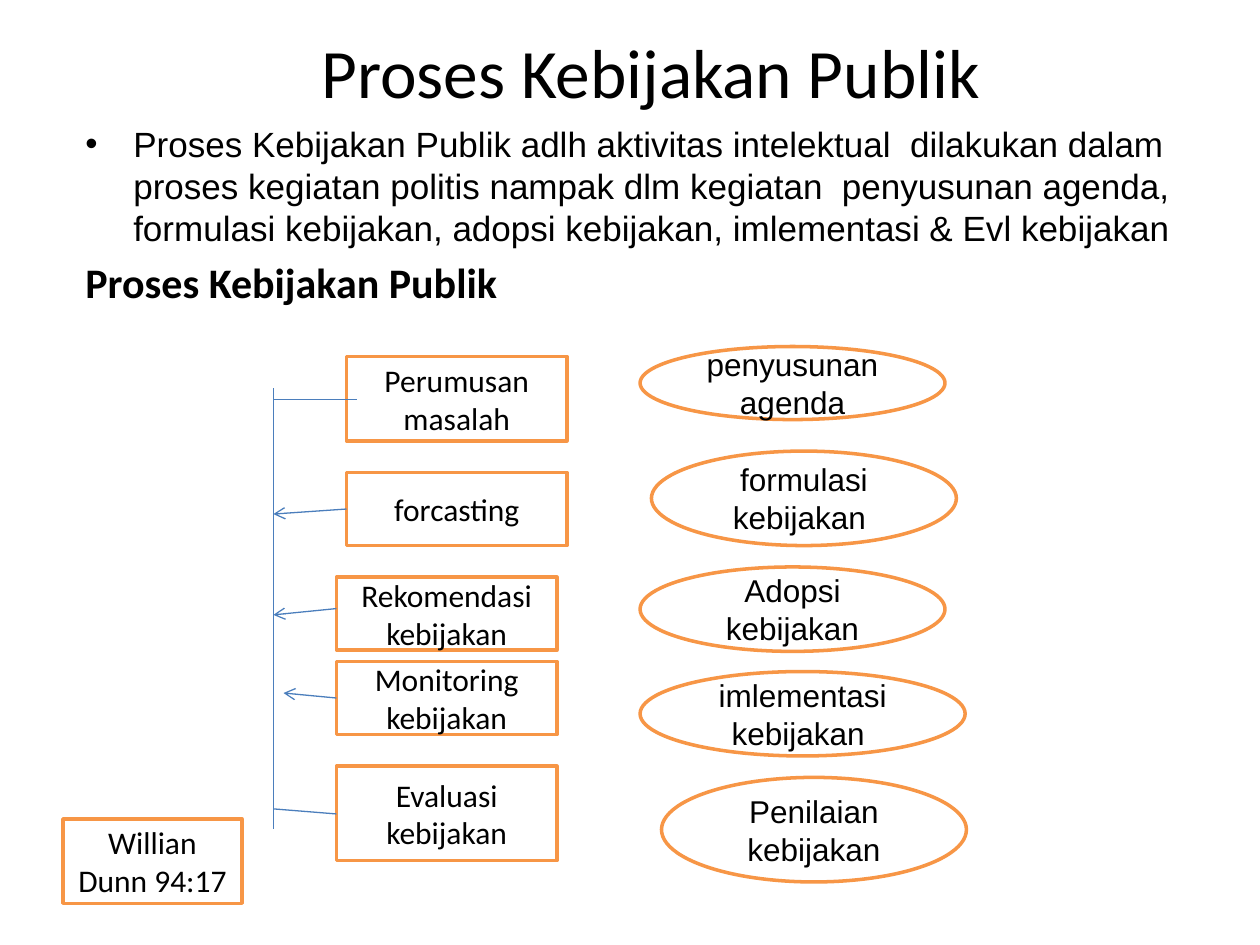
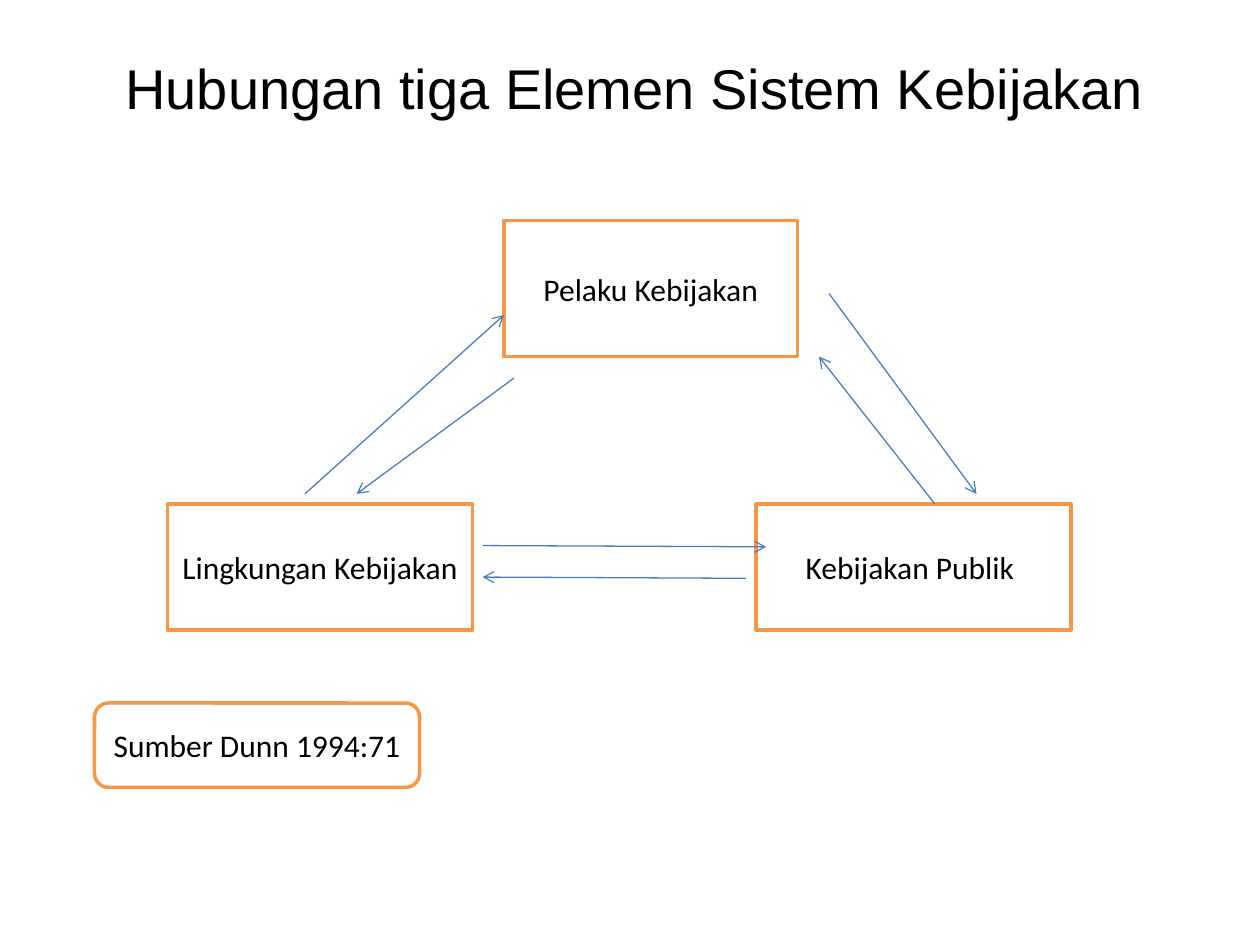
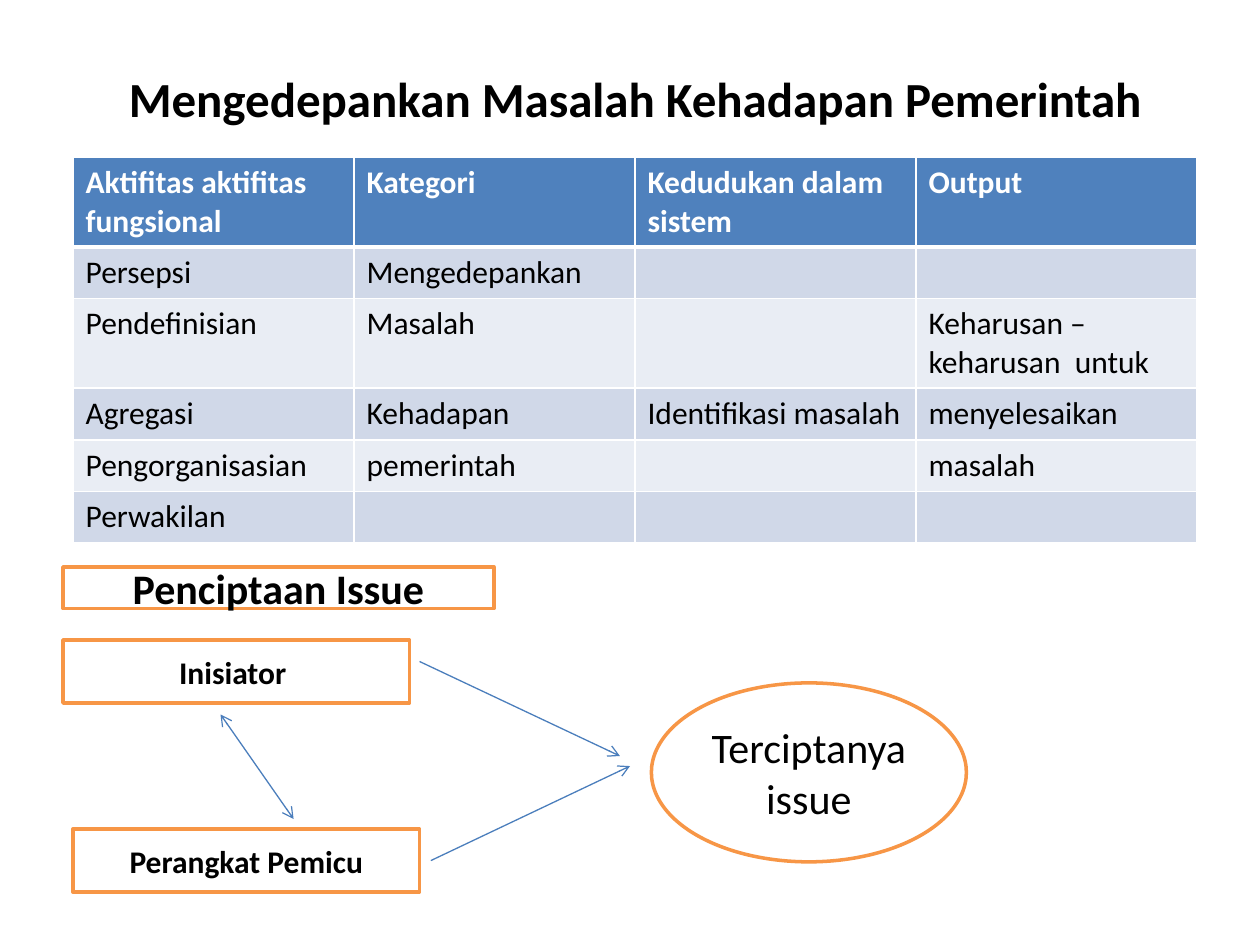
import pptx
import pptx.dml.color
import pptx.enum.shapes
import pptx.enum.text
import pptx.oxml
import pptx.oxml.ns
import pptx.util
from pptx.util import Inches

RGBColor = pptx.dml.color.RGBColor
BLACK = RGBColor(0x00, 0x00, 0x00)
WHITE = RGBColor(0xFF, 0xFF, 0xFF)
ORANGE = RGBColor(0xF7, 0x96, 0x46)
LINE_BLUE = RGBColor(0x4B, 0x7E, 0xBC)
HEADER_BLUE = RGBColor(0x4F, 0x81, 0xBD)
BAND_DARK = RGBColor(0xD0, 0xD8, 0xE8)
BAND_LIGHT = RGBColor(0xE9, 0xED, 0xF4)

SHAPE = pptx.enum.shapes.MSO_SHAPE
RECT, OVAL, ROUNDED = SHAPE.RECTANGLE, SHAPE.OVAL, SHAPE.ROUNDED_RECTANGLE
ANCHOR = pptx.enum.text.MSO_ANCHOR
CENTER = pptx.enum.text.PP_ALIGN.CENTER
TITLE_ONLY = 5


def add_xml(parent, tag, **attrs):
    el = pptx.oxml.parse_xml(f'<a:{tag} {pptx.oxml.ns.nsdecls("a")}/>')
    for name, value in attrs.items():
        el.set(name, str(value))
    parent.append(el)
    return el


class Deck:
    def __init__(self):
        self.prs = pptx.Presentation()
        self.prs.slide_width, self.prs.slide_height = Inches(10), Inches(7.5)
        self.s = None

    def font(self, p, size=18, name="Calibri", color=BLACK, bold=False):
        f = p.font
        f.size, f.name, f.bold = pptx.util.Pt(size), name, bold
        f.color.rgb = color

    def slide(self, title, x, y, w, h, **font):
        self.s = self.prs.slides.add_slide(self.prs.slide_layouts[TITLE_ONLY])
        sp = self.s.shapes.title
        sp.left, sp.top, sp.width, sp.height = map(Inches, (x, y, w, h))
        tf = sp.text_frame
        tf.auto_size = pptx.enum.text.MSO_AUTO_SIZE.NONE
        tf.vertical_anchor = ANCHOR.MIDDLE
        p = tf.paragraphs[0]
        p.text, p.alignment = title, CENTER
        self.font(p, **font)

    def body(self, x, y, w, h, items):
        """Each item is (text, bulleted, font settings)."""
        tf = self.s.shapes.add_textbox(*map(Inches, (x, y, w, h))).text_frame
        tf.word_wrap = True
        for i, (text, bulleted, font) in enumerate(items):
            p = tf.add_paragraph() if i else tf.paragraphs[0]
            p.text = text
            if i:
                p.space_before = pptx.util.Pt(font["size"] * 0.2)
            pPr = p._p.get_or_add_pPr()
            pPr.set("marL", str(Inches(0.38)))
            pPr.set("indent", str(-Inches(0.38)))
            if bulleted:
                add_xml(pPr, "buFont", typeface="Arial")
                add_xml(pPr, "buChar", char="•")
            else:
                add_xml(pPr, "buNone")
            self.font(p, **font)

    def box(self, text, x, y, w, h, kind=RECT, **font):
        sp = self.s.shapes.add_shape(kind, *map(Inches, (x, y, w, h)))
        sp.shadow.inherit = False
        sp.fill.solid()
        sp.fill.fore_color.rgb = WHITE
        sp.line.color.rgb = ORANGE
        sp.line.width = pptx.util.Pt(2)
        tf = sp.text_frame
        tf.word_wrap, tf.vertical_anchor = True, ANCHOR.MIDDLE
        p = tf.paragraphs[0]
        p.text, p.alignment = text, CENTER
        self.font(p, **font)

    def line(self, x1, y1, x2, y2, head=False, tail=False):
        c = self.s.shapes.add_connector(
            pptx.enum.shapes.MSO_CONNECTOR.STRAIGHT, *map(Inches, (x1, y1, x2, y2)))
        c.line.color.rgb = LINE_BLUE
        c.line.width = pptx.util.Pt(0.75)
        ln = c.line._get_or_add_ln()
        for end, shown in (("headEnd", head), ("tailEnd", tail)):
            if shown:
                add_xml(ln, end, type="arrow")
        add_xml(c._element.spPr, "effectLst")

    def arrow(self, x1, y1, x2, y2, head=False):
        self.line(x1, y1, x2, y2, head, tail=True)

    def border(self, cell, side, width):
        ln = add_xml(cell._tc.get_or_add_tcPr(), "ln" + side, w=pptx.util.Pt(width))
        add_xml(add_xml(ln, "solidFill"), "srgbClr", val=WHITE)

    def table(self, x, y, w, heights, rows):
        tb = self.s.shapes.add_table(
            len(rows), len(rows[0]), *map(Inches, (x, y, w, sum(heights)))).table
        for i, (row, height) in enumerate(zip(rows, heights)):
            tb.rows[i].height = Inches(height)
            for j, text in enumerate(row):
                cell = tb.cell(i, j)
                for side in "LRTB":
                    thick = (i, side) in ((0, "B"), (1, "T"))
                    self.border(cell, side, 3 if thick else 1)
                cell.fill.solid()
                band = BAND_DARK if i % 2 else BAND_LIGHT
                cell.fill.fore_color.rgb = band if i else HEADER_BLUE
                p = cell.text_frame.paragraphs[0]
                p.text = text
                self.font(p, color=BLACK if i else WHITE, bold=i == 0)


def policy_process(d):
    d.slide("Proses Kebijakan Publik", 0.83, 0.3, 8.67, 0.53, size=39.6)
    d.body(0.58, 0.92, 8.83, 6.25, [
        ("Proses Kebijakan Publik adlh aktivitas intelektual  dilakukan dalam proses "
         "kegiatan politis nampak dlm kegiatan  penyusunan agenda, formulasi kebijakan, "
         "adopsi kebijakan, imlementasi & Evl kebijakan", True,
         dict(size=20, name="Arial")),
        ("Proses Kebijakan Publik", False, dict(size=24, bold=True)),
    ])

    # Analysis steps
    for text, x, y, h in (
        ("Perumusan masalah", 2.75, 2.83, 0.67),
        ("forcasting", 2.75, 3.75, 0.58),
        ("Rekomendasi kebijakan", 2.67, 4.58, 0.58),
        ("Monitoring kebijakan", 2.67, 5.25, 0.58),
        ("Evaluasi kebijakan", 2.67, 6.08, 0.75),
    ):
        d.box(text, x, y, 1.75, h)

    # Spine and its branches
    d.line(2.83, 3.17, 2.17, 3.17)
    d.line(2.17, 3.08, 2.17, 6.58)
    d.line(2.17, 6.42, 2.67, 6.46)
    d.arrow(2.75, 4.04, 2.17, 4.08)
    d.arrow(2.67, 5.54, 2.25, 5.5)
    d.arrow(2.67, 4.83, 2.17, 4.88)
    d.box("Willian Dunn 94:17", 0.5, 6.5, 1.42, 0.67)

    # Policy stages
    for text, x, y, w, h in (
        ("penyusunan agenda", 5.08, 2.75, 2.42, 0.58),
        ("formulasi kebijakan ", 5.17, 3.58, 2.42, 0.75),
        ("Adopsi kebijakan", 5.08, 4.5, 2.42, 0.67),
        ("imlementasi kebijakan ", 5.08, 5.33, 2.58, 0.67),
        ("Penilaian kebijakan", 5.25, 6.17, 2.42, 0.83),
    ):
        d.box(text, x, y, w, h, OVAL, name="Arial")


def policy_system(d):
    d.slide("Hubungan tiga Elemen Sistem Kebijakan", 0.58, 0.3, 8.92, 0.78,
            size=32, name="Arial")

    # Three elements
    d.box("Pelaku Kebijakan", 4, 1.75, 2.33, 1.08)
    d.box("Kebijakan Publik ", 6, 4, 2.5, 1)
    d.box("Lingkungan Kebijakan", 1.33, 4, 2.42, 1)

    # Mutual relations
    for ends in (
        (2.42, 3.92, 4, 2.5), (4.08, 3, 2.83, 3.92),
        (3.83, 4.33, 6.08, 4.34), (5.92, 4.59, 3.83, 4.58),
        (6.58, 2.33, 7.75, 3.92), (7.42, 4, 6.5, 2.83),
    ):
        d.arrow(*ends)
    d.box("Sumber Dunn 1994:71", 0.75, 5.58, 2.58, 0.67, ROUNDED)


def problem_to_government(d):
    d.slide("Mengedepankan Masalah Kehadapan Pemerintah", 0.58, 0.3, 8.92, 0.95,
            size=28, bold=True)
    d.table(0.58, 1.25, 8.92, [0.7, 0.41, 0.7, 0.41, 0.41, 0.41], [
        ("Aktifitas aktifitas fungsional", "Kategori", "Kedudukan dalam sistem", "Output"),
        ("Persepsi", "Mengedepankan", "", ""),
        ("Pendefinisian", "Masalah", "", "Keharusan –keharusan  untuk"),
        ("Agregasi", "Kehadapan", "Identifikasi masalah", "menyelesaikan"),
        ("Pengorganisasian", "pemerintah", "", "masalah"),
        ("Perwakilan", "", "", ""),
    ])

    # Issue creation
    d.box("Inisiator ", 0.5, 5.08, 2.75, 0.5, bold=True)
    d.box("Penciptaan Issue", 0.5, 4.5, 3.42, 0.33, size=24, bold=True)
    d.box("Perangkat Pemicu", 0.58, 6.58, 2.75, 0.5, bold=True)
    d.arrow(1.75, 5.67, 2.33, 6.5, head=True)
    d.arrow(3.33, 5.25, 4.92, 6)
    d.arrow(3.42, 6.83, 5, 6.08)
    d.box("Terciptanya issue", 5.17, 5.42, 2.5, 1.42, OVAL, size=24)


def main():
    d = Deck()
    policy_process(d)
    policy_system(d)
    problem_to_government(d)
    d.prs.save("out.pptx")


if __name__ == "__main__":
    main()
